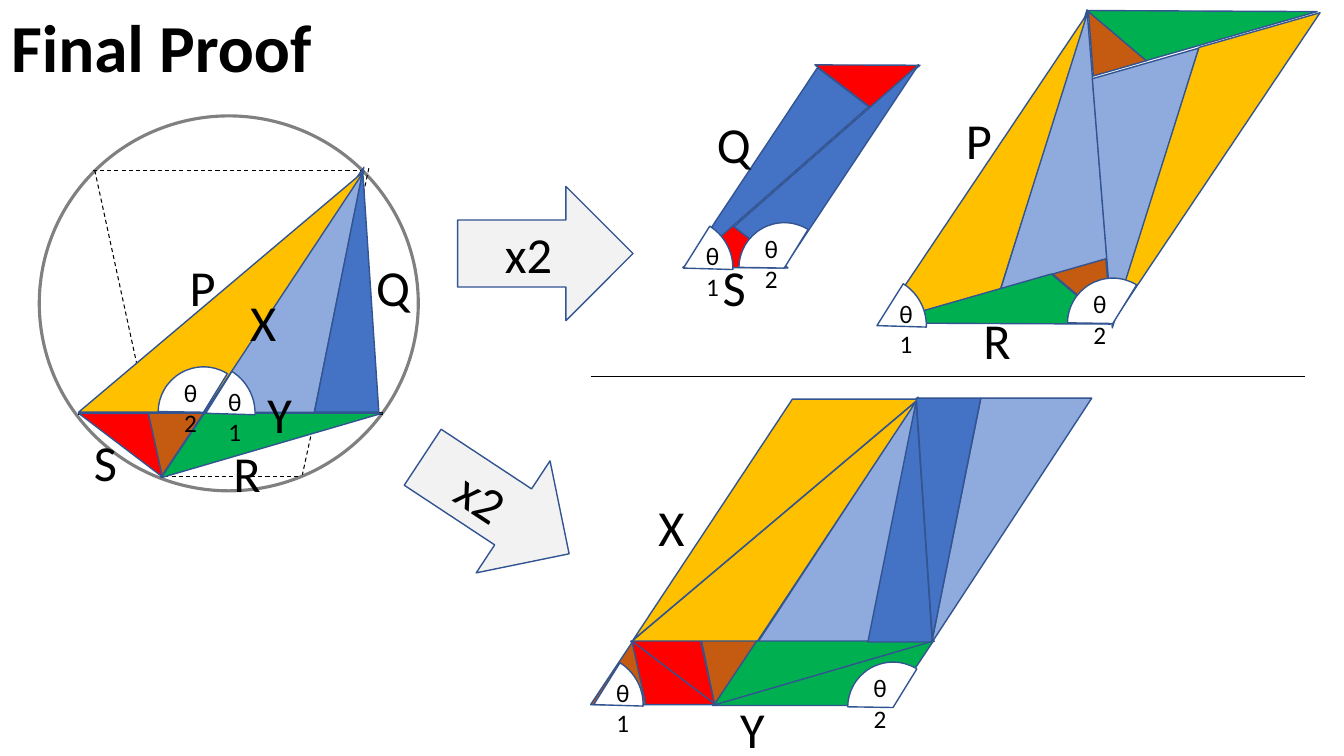
from lxml import etree
from pptx import Presentation
from pptx.dml.color import RGBColor
from pptx.enum import dml, shapes, text
from pptx.oxml import ns
from pptx.util import Pt

BLACK = RGBColor(0x00, 0x00, 0x00)
WHITE = RGBColor(0xFF, 0xFF, 0xFF)
GRAY = RGBColor(0x80, 0x80, 0x80)
LIGHT_GRAY = RGBColor(0xF2, 0xF2, 0xF2)
OUTLINE = RGBColor(0x32, 0x54, 0x91)
PALE_BLUE = RGBColor(0x8F, 0xAA, 0xDC)
BLUE = RGBColor(0x44, 0x72, 0xC4)
GOLD = RGBColor(0xFF, 0xC0, 0x00)
BROWN = RGBColor(0xC5, 0x5A, 0x11)
GREEN = RGBColor(0x00, 0xB0, 0x50)
RED = RGBColor(0xFF, 0x00, 0x00)

# Obtuse triangles: color, width, height, corners
OBTUSE = {
    "pale": (PALE_BLUE, 114.5, 175, [(0, 175), (114.5, 0), (79.2, 175)]),
    "gold": (GOLD, 203.8, 172, [(0, 172), (203.8, 0), (90, 172)]),
    "green": (GREEN, 157.7, 46, [(0, 46), (157.7, 0), (127, 46)]),
    "red": (RED, 59.8, 45.4, [(0, 0), (59.8, 45.4), (10, 45.4)]),
}
# Acute triangles: color, width, height, apex position
ACUTE = {
    "blue": (BLUE, 46, 172, 0.75),
    "brown": (BROWN, 39.6, 45.4, 0.765),
}
# Angle marks: diameter, start and end degrees, label offset
ANGLES = {
    "θ1": (70.6, 302.13, 1.71, (42.8, 12.2)),
    "θ2": (64.8, 180.87, 301.67, (9.8, 4)),
}
LABEL_WIDTHS = {"P": 33.1, "Q": 38.9, "R": 34.6, "S": 31, "X": 33.1, "Y": 32.4}

# Figures: triangles (name, left, top, rotation, mirrored), angles, labels
FIGURES = [
    {   # Inscribed quadrilateral
        "triangles": [
            ("pale", 145.4, 119.5, 0, False), ("gold", 56.2, 122.4, 0, False),
            ("brown", 105.8, 295.2, 180, False), ("green", 115.2, 295.2, 180, False),
            ("red", 56.2, 295.2, 180, False), ("blue", 224.6, 122.4, 0, False)],
        "angles": [("θ1", 111.6, 259.9), ("θ2", 113, 262.1)],
        "labels": [("R", 159.1, 312.5), ("S", 59.8, 304.6), ("P", 128.2, 179.3),
                   ("Q", 261.4, 179.3), ("X", 171.4, 204.5), ("Y", 183.6, 270)],
    },
    {   # Parallelogram Q by S
        "triangles": [
            ("red", 495.4, 168.5, 217.4, True), ("blue", 527, 44.6, 217.4, False),
            ("red", 589.7, 23.8, 37.4, True), ("blue", 571.7, 21.6, 37.4, False)],
        "angles": [("θ2", 527.8, 159.1), ("θ1", 452.9, 156.2)],
        "labels": [("Q", 504.7, 77), ("S", 509, 179.3)],
    },
    {   # Parallelogram P by R
        "triangles": [
            ("pale", 688.3, 19.4, 344, False), ("gold", 600.5, 34.6, 344, False),
            ("brown", 757.4, 189.4, 164, True), ("green", 632.2, 208.1, 164, True),
            ("pale", 768.2, 46.8, 164, False), ("gold", 766.8, 33.8, 164, False),
            ("brown", 774, 4.3, 344, True), ("green", 779.8, -15.1, 344, True)],
        "angles": [("θ1", 591.1, 197.3), ("θ2", 762.5, 198.7)],
        "labels": [("P", 682.6, 74.2), ("R", 694.8, 217.4)],
    },
    {   # Parallelogram X by Y
        "triangles": [
            ("pale", 541.4, 283.7, 0, False), ("gold", 450.7, 286.6, 0, False),
            ("brown", 501.1, 457.9, 180, False), ("green", 509.8, 457.9, 180, False),
            ("red", 450.7, 457.9, 180, False), ("blue", 619.9, 286.6, 0, False),
            ("gold", 452.2, 285.1, 180, False), ("green", 509, 457.9, 0, False),
            ("brown", 421.9, 457.9, 0, False), ("red", 451.4, 457.9, 0, False),
            ("pale", 665.3, 284.4, 180, False), ("blue", 654.5, 284.4, 180, False)],
        "angles": [("θ1", 388.8, 468), ("θ2", 605.5, 473)],
        "labels": [("X", 463, 350.6), ("Y", 521.3, 495.4)],
    },
]
# Lines: x1, y1, x2, y2, weight, dashed
LINES = [
    (55.4, 295.2, 273.6, 295.2, 2.25, False),
    (259.2, 121.7, 115.2, 340.6, 2.25, False),
    (66.2, 121.7, 257.8, 121.7, 0.75, True),
    (67.7, 121.7, 115.2, 340.6, 0.75, True),
    (117.4, 340.6, 213.1, 340.6, 0.75, True),
    (263.5, 120.2, 216, 339.1, 0.75, True),
    (421.9, 268.6, 932.4, 268.6, 0.5, False),
]
ARROWS = [(326.9, 133.2, 0), (291.6, 313.2, 33.4)]


def write(shape, words, size=36, bold=False, align=text.PP_ALIGN.CENTER,
          anchor=text.MSO_ANCHOR.TOP, wrap=False):
    frame = shape.text_frame
    frame.auto_size = text.MSO_AUTO_SIZE.NONE
    frame.word_wrap = wrap
    frame.vertical_anchor = anchor
    paragraph = frame.paragraphs[0]
    paragraph.alignment = align
    run = paragraph.add_run()
    run.text = words
    run.font.name = "Calibri"
    run.font.size = Pt(size)
    run.font.bold = bold
    run.font.color.rgb = BLACK


def paint(shape, color, rotation=0):
    shape.shadow.inherit = False
    shape.fill.solid()
    shape.fill.fore_color.rgb = color
    shape.line.color.rgb = OUTLINE
    shape.line.width = Pt(1)
    shape.rotation = rotation


def box(left, top, width, height):
    return Pt(left), Pt(top), Pt(width), Pt(height)


def add_triangle(canvas, name, left, top, rotation, mirrored):
    if name in ACUTE:
        color, width, height, apex = ACUTE[name]
        shape = canvas.add_shape(shapes.MSO_SHAPE.ISOSCELES_TRIANGLE,
                                 *box(left, top, width, height))
        shape.adjustments[0] = 1 - apex if mirrored else apex
    else:
        color, width, height, corners = OBTUSE[name]
        points = [(Pt(left + (width - x if mirrored else x)), Pt(top + y))
                  for x, y in corners]
        builder = canvas.build_freeform(*points[0])
        builder.add_line_segments(points[1:], close=True)
        shape = builder.convert_to_shape()
    paint(shape, color, rotation)


def add_angle(canvas, name, left, top):
    diameter, start, end, (dx, dy) = ANGLES[name]
    pie = canvas.add_shape(shapes.MSO_SHAPE.PIE, *box(left, top, diameter, diameter))
    pie.adjustments[0] = start * 0.6
    pie.adjustments[1] = end * 0.6
    paint(pie, WHITE)
    write(canvas.add_textbox(*box(left + dx, top + dy, 26.6, 23)), name,
          size=18, wrap=True)


presentation = Presentation()
presentation.slide_width, presentation.slide_height = Pt(960), Pt(540)
slide = presentation.slides.add_slide(presentation.slide_layouts[5])

# Title
title = slide.shapes.title
title.left, title.top, title.width, title.height = box(0.7, 0, 231.1, 65.5)
write(title, "Final Proof", size=48, bold=True, align=text.PP_ALIGN.LEFT)

# Circle and lines
circle = slide.shapes.add_shape(shapes.MSO_SHAPE.OVAL, *box(28.1, 82.8, 270.7, 267.8))
circle.shadow.inherit = False
circle.fill.background()
circle.line.color.rgb = GRAY
circle.line.width = Pt(2.25)
for x1, y1, x2, y2, weight, dashed in LINES:
    line = slide.shapes.add_connector(shapes.MSO_CONNECTOR.STRAIGHT, *box(x1, y1, x2, y2))
    line.line.color.rgb = BLACK
    line.line.width = Pt(weight)
    if dashed:
        line.line.dash_style = dml.MSO_LINE.DASH
    etree.SubElement(line._element.spPr, ns.qn("a:effectLst"))

# Dissected figures
for figure in FIGURES:
    canvas = slide.shapes.add_group_shape().shapes
    for triangle in figure["triangles"]:
        add_triangle(canvas, *triangle)
    for angle in figure["angles"]:
        add_angle(canvas, *angle)
    for letter, left, top in figure["labels"]:
        write(canvas.add_textbox(*box(left, top, LABEL_WIDTHS[letter], 51.1)), letter)

# Doubling arrows
for left, top, rotation in ARROWS:
    arrow = slide.shapes.add_shape(shapes.MSO_SHAPE.RIGHT_ARROW,
                                   *box(left, top, 125.3, 95.8))
    paint(arrow, LIGHT_GRAY, rotation)
    write(arrow, "x2", anchor=text.MSO_ANCHOR.MIDDLE, wrap=True)

presentation.save("out.pptx")
